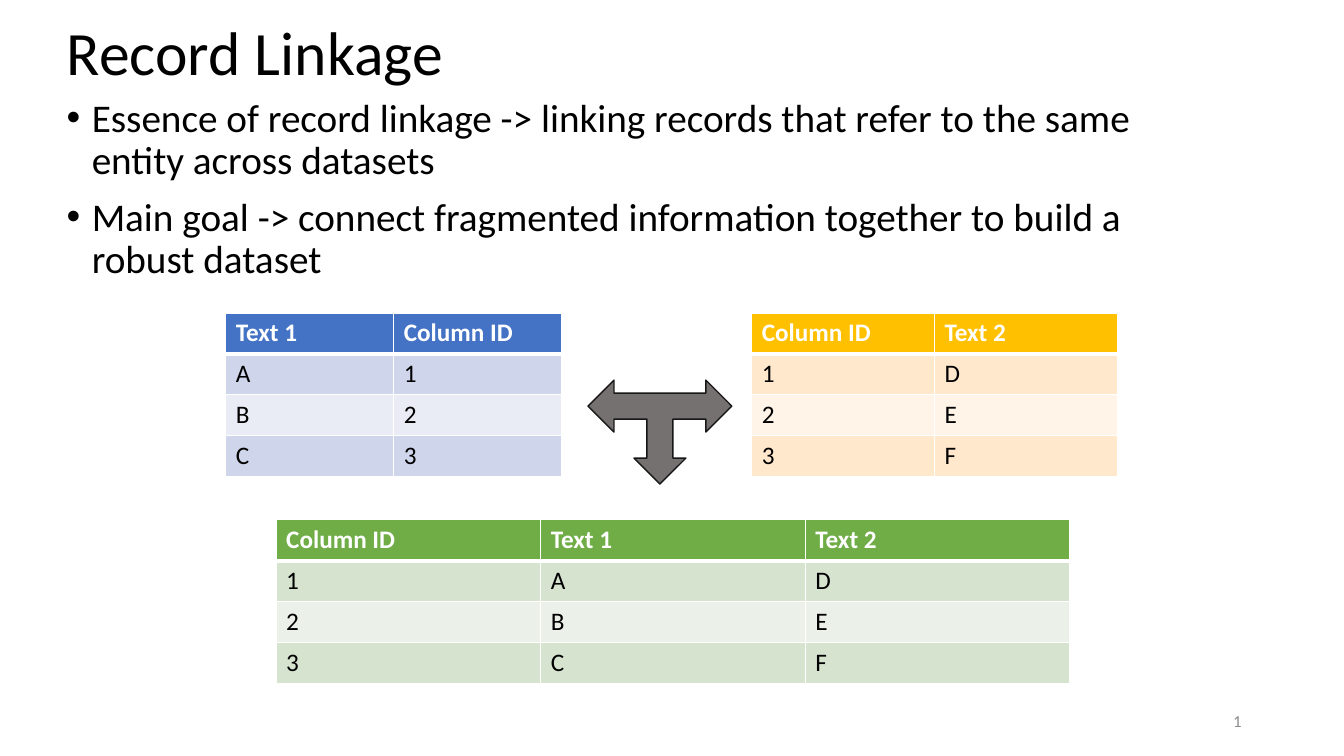
from lxml.etree import SubElement
from pptx import Presentation
from pptx.dml.color import RGBColor
from pptx.enum.shapes import MSO_SHAPE as Shape
from pptx.enum.text import MSO_ANCHOR as Anchor, MSO_AUTO_SIZE as AutoSize, PP_ALIGN as Align
from pptx.oxml.ns import qn
from pptx.util import Emu, Pt

PX = 9525
FONT = "Calibri"
BLACK, WHITE, GRAY = "000000", "FFFFFF", "8C8C8C"
TITLE_ONLY = 5
ROW_HEIGHT = 39


def px(*lengths):
    return [Emu(length * PX) for length in lengths]


def color(hex_code):
    return RGBColor.from_string(hex_code)


class SlideBuilder:
    def __init__(self, presentation):
        self.slide = presentation.slides.add_slide(presentation.slide_layouts[TITLE_ONLY])

    def style(self, paragraph, size, hex_code=BLACK, bold=False):
        font = paragraph.font
        font.name, font.size, font.bold = FONT, Pt(size), bold
        font.color.rgb = color(hex_code)

    def title(self, text, box):
        shape = self.slide.shapes.title
        shape.left, shape.top, shape.width, shape.height = px(*box)
        frame = shape.text_frame
        frame.text = text
        frame.auto_size = AutoSize.NONE
        frame.vertical_anchor = Anchor.MIDDLE
        paragraph = frame.paragraphs[0]
        paragraph.alignment = Align.LEFT
        paragraph.line_spacing = 0.9
        self.style(paragraph, 44)

    def text_box(self, box):
        frame = self.slide.shapes.add_textbox(*px(*box)).text_frame
        frame.word_wrap = True
        return frame

    def bullets(self, items, box):
        frame = self.text_box(box)
        for index, item in enumerate(items):
            paragraph = frame.add_paragraph() if index else frame.paragraphs[0]
            paragraph.text = item
            paragraph.line_spacing = 0.9
            paragraph.space_before = Pt(10 if index else 0)
            properties = paragraph._p.get_or_add_pPr()
            properties.set("marL", str(24 * PX))
            properties.set("indent", str(-24 * PX))
            SubElement(properties, qn("a:buFont"), typeface="Arial")
            SubElement(properties, qn("a:buChar"), char="•")
            self.style(paragraph, 28)

    def slide_number(self, number, box):
        frame = self.text_box(box)
        frame.vertical_anchor = Anchor.MIDDLE
        paragraph = frame.paragraphs[0]
        paragraph.alignment = Align.RIGHT
        self.style(paragraph, 12, GRAY)
        field = SubElement(paragraph._p, qn("a:fld"), type="slidenum",
                           id="{B6F15528-21DE-4FAA-801E-634DDDAF4B2B}")
        SubElement(field, qn("a:rPr"), lang="en-US")
        SubElement(field, qn("a:t")).text = str(number)

    def borders(self, cell, row):
        """Draw white cell borders, thick between the header and the data."""
        properties = cell._tc.get_or_add_tcPr()
        thick_side = {0: "B", 1: "T"}.get(row)
        for position, side in enumerate("LRTB"):
            width = Pt(3 if side == thick_side else 1)
            line = properties.makeelement(qn(f"a:ln{side}"), {"w": str(width)})
            properties.insert(position, line)
            fill = SubElement(line, qn("a:solidFill"))
            SubElement(fill, qn("a:srgbClr"), val=WHITE)

    def table(self, rows, left, top, column_width, header_fill, band_fills):
        columns = len(rows[0])
        box = px(left, top, column_width * columns, ROW_HEIGHT * len(rows))
        table = self.slide.shapes.add_table(len(rows), columns, *box).table
        for row, values in enumerate(rows):
            fill = band_fills[(row - 1) % 2] if row else header_fill
            for column, value in enumerate(values):
                cell = table.cell(row, column)
                cell.text = value
                cell.fill.solid()
                cell.fill.fore_color.rgb = color(fill)
                self.borders(cell, row)
                self.style(cell.text_frame.paragraphs[0], 18,
                           BLACK if row else WHITE, bold=row == 0)

    def arrow(self, box, fill, line):
        shape = self.slide.shapes.add_shape(Shape.LEFT_RIGHT_UP_ARROW, *px(*box))
        shape.rotation = 180
        shape.shadow.inherit = False
        shape.fill.solid()
        shape.fill.fore_color.rgb = color(fill)
        shape.line.color.rgb = color(line)
        shape.line.width = Pt(1)


def main():
    presentation = Presentation()
    presentation.slide_width, presentation.slide_height = px(1280, 720)
    builder = SlideBuilder(presentation)

    builder.title("Record Linkage", (54, -17, 1104, 139))
    builder.bullets([
        "Essence of record linkage -> linking records that refer to the same entity across datasets",
        "Main goal -> connect fragmented information together to build a robust dataset",
    ], (54, 89, 1104, 457))
    builder.slide_number(2, (904, 667, 288, 38))

    text_1 = ["Text 1", "A", "B", "C"]
    text_2 = ["Text 2", "D", "E", "F"]
    column_id = ["Column ID", "1", "2", "3"]
    builder.table(list(zip(text_1, column_id)), 215, 298, 160,
                  "4472C4", ("CFD5EA", "E9EBF5"))
    builder.table(list(zip(column_id, text_2)), 716, 298, 174,
                  "FFC000", ("FFE8CC", "FFF4E7"))
    builder.table(list(zip(column_id, text_1, text_2)), 263, 495, 252,
                  "70AD47", ("D5E3CF", "EBF1E9"))
    builder.arrow((560, 362, 137, 99), "767171", "181717")

    presentation.save("out.pptx")


if __name__ == "__main__":
    main()
